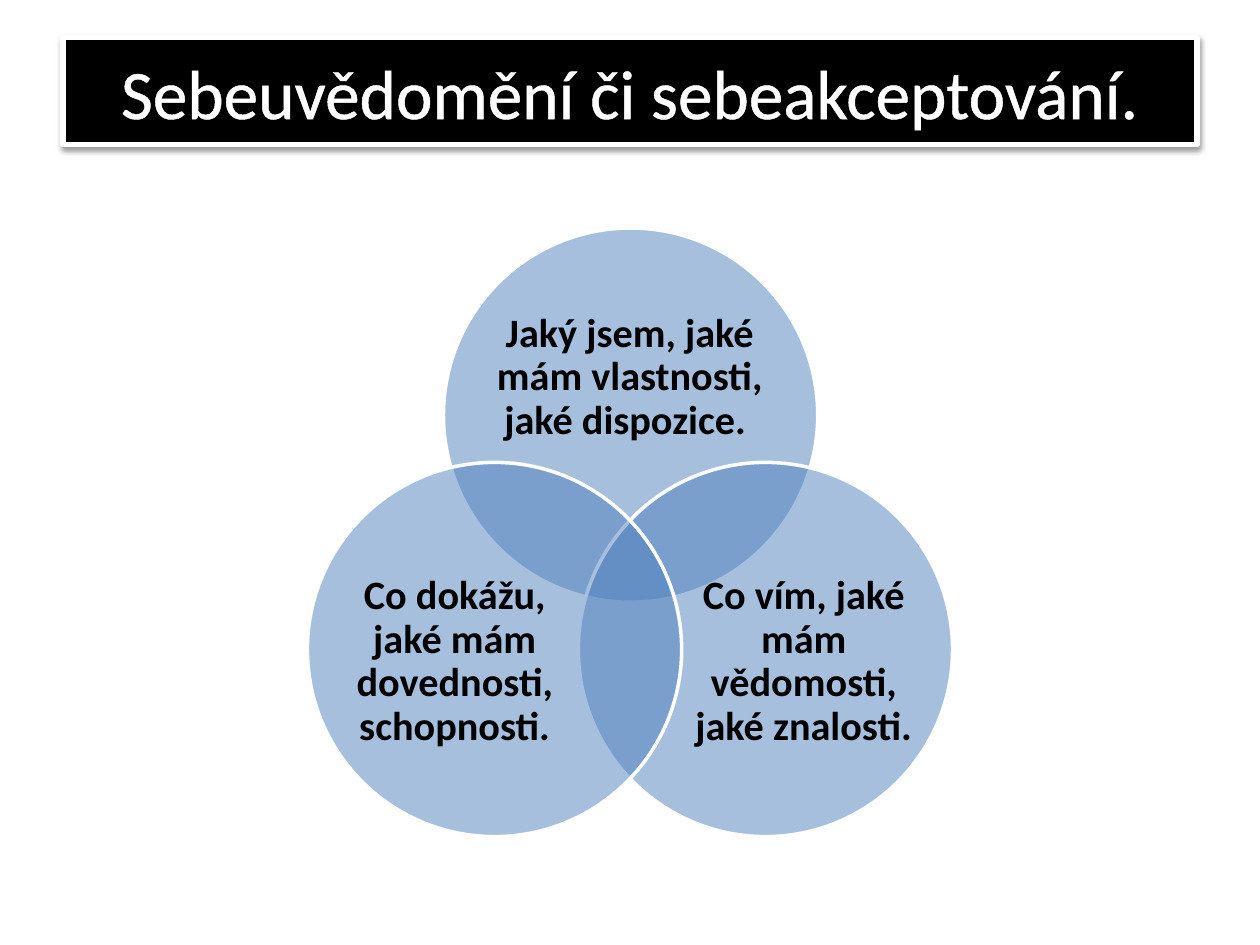
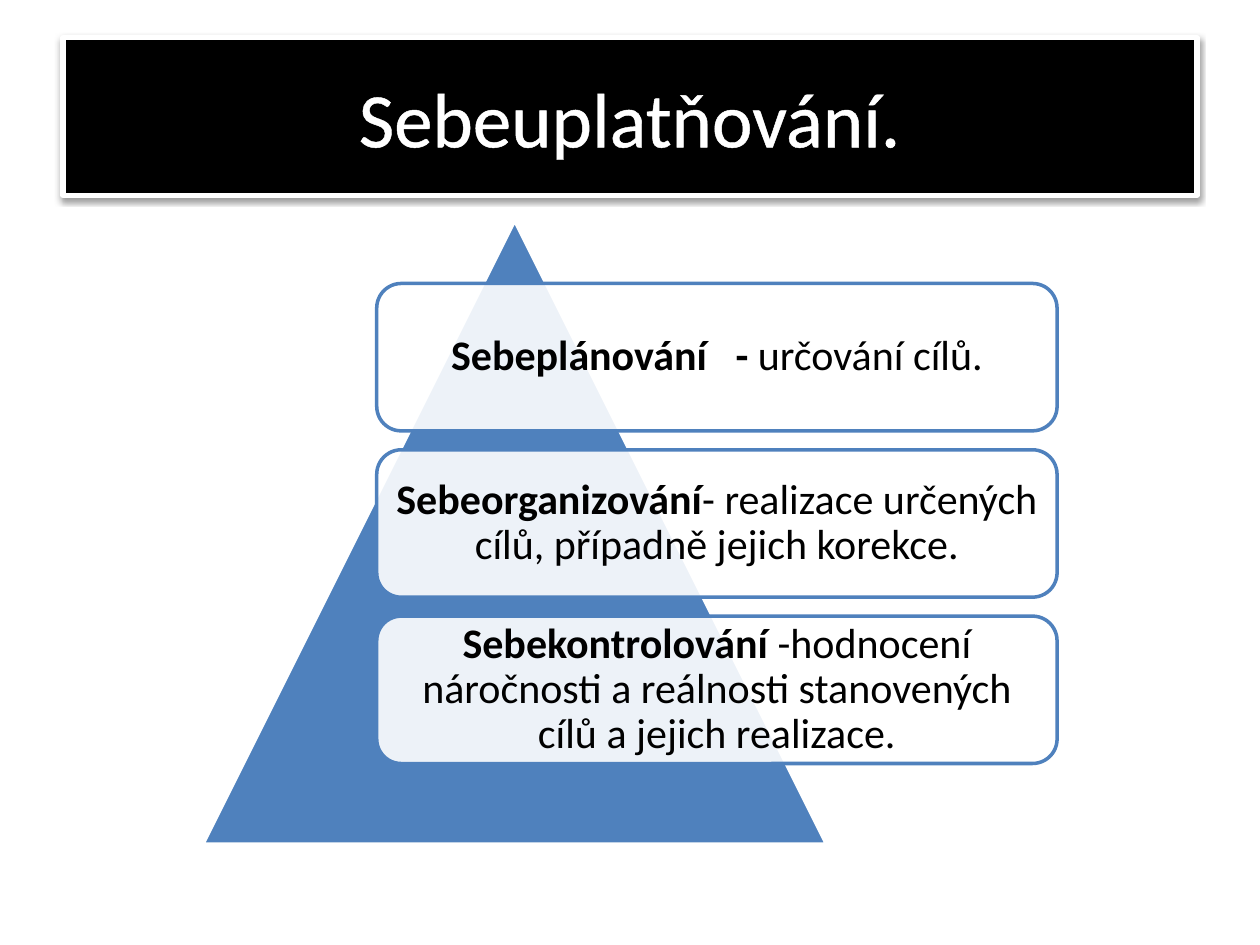
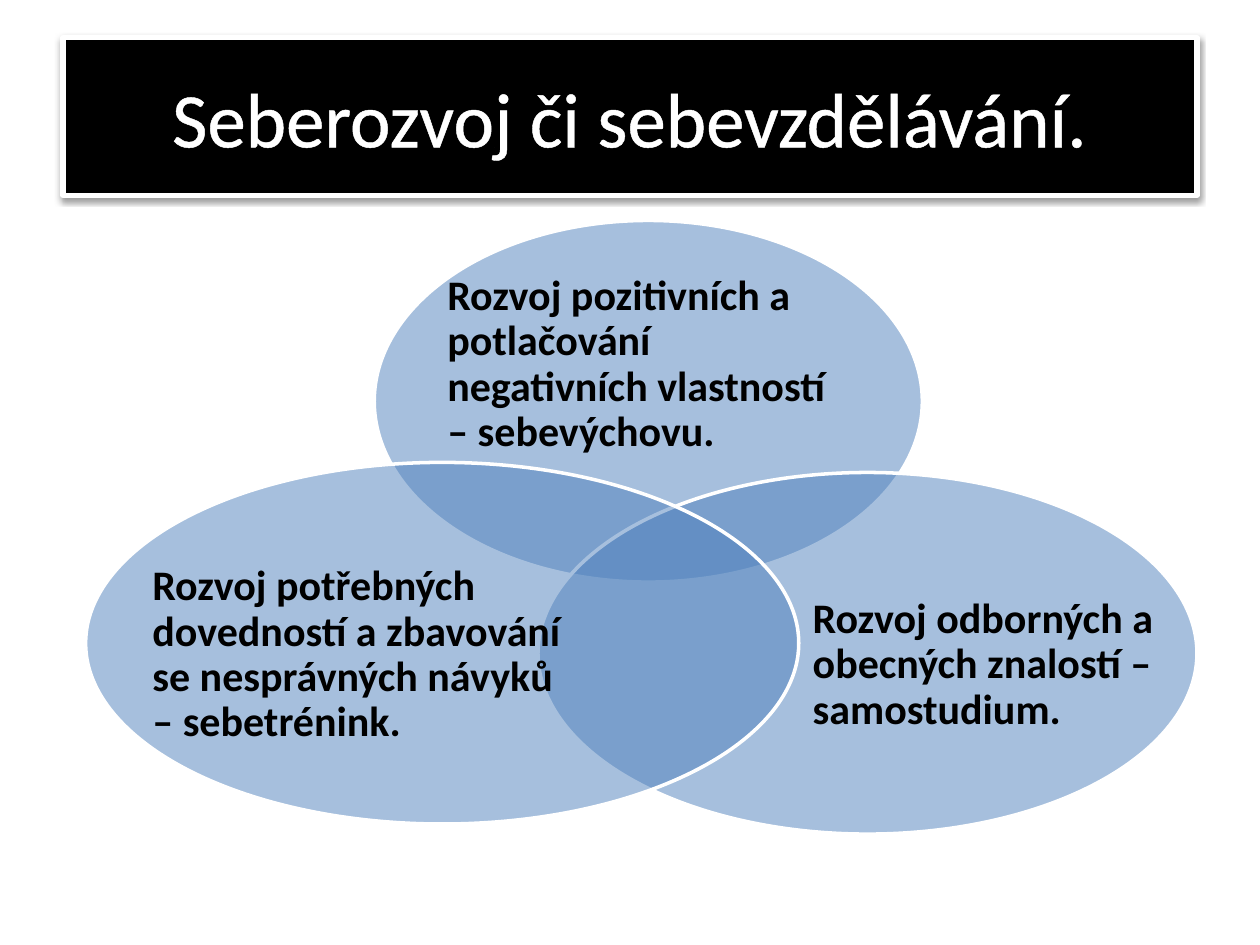
from lxml.etree import SubElement
from pptx import Presentation
from pptx.dml.color import RGBColor
from pptx.enum.shapes import MSO_SHAPE
from pptx.enum.text import MSO_ANCHOR, MSO_AUTO_SIZE, PP_ALIGN
from pptx.oxml import parse_xml
from pptx.oxml.ns import nsdecls, qn
from pptx.util import Inches, Pt

BLACK = RGBColor(0x00, 0x00, 0x00)
WHITE = RGBColor(0xFF, 0xFF, 0xFF)
BLUE = RGBColor(0x4F, 0x81, 0xBD)
FONT = "Calibri"

# Each circle: its box, its text box (left, top, width, height), its text
AWARENESS = [
    ((3.52, 1.81, 2.97, 2.97), (3.91, 2.33, 2.18, 1.34),
     "Jaký jsem, jaké mám vlastnosti, jaké dispozice. "),
    ((4.59, 3.67, 2.97, 2.97), (5.49, 4.44, 1.78, 1.63),
     "Co vím, jaké mám vědomosti, jaké znalosti."),
    ((2.44, 3.67, 2.97, 2.97), (2.72, 4.44, 1.78, 1.63),
     "Co dokážu, jaké mám dovednosti, schopnosti."),
]
DEVELOPMENT = [
    ((2.97, 1.75, 4.35, 2.87), (3.55, 2.25, 3.19, 1.29),
     "Rozvoj pozitivních a potlačování negativních vlastností – sebevýchovu."),
    ((4.27, 3.75, 5.23, 2.87), (6.45, 4.49, 2.75, 1.58),
     "Rozvoj odborných a obecných znalostí – samostudium."),
    ((0.68, 3.67, 5.66, 2.87), (1.21, 4.41, 3.4, 1.58),
     "Rozvoj potřebných dovedností a zbavování se nesprávných návyků – sebetrénink."),
]
# Each step: runs of (text, bold, extra letter spacing in points)
STEPS = [
    [("Sebeplánování", True, 0), (" ", True, 10.8), ("-", True, 0),
     (" určování cílů.", False, 0)],
    [("Sebeorganizování", True, 0),
     ("- realizace určených cílů, případně jejich korekce.", False, 0)],
    [("Sebekontrolování", True, 0),
     (" -hodnocení náročnosti a reálnosti stanovených cílů a jejich realizace.", False, 0)],
]
STEP_LEFT, STEP_TOP, STEP_WIDTH, STEP_HEIGHT = 2.99, 2.25, 5.4, 1.17
STEP_PITCH = 1.32

TITLE_SHADOW = (
    f'<a:effectLst {nsdecls("a")}><a:outerShdw blurRad="40000" dist="20000" dir="5400000"'
    ' rotWithShape="0"><a:srgbClr val="000000"><a:alpha val="38000"/></a:srgbClr>'
    '</a:outerShdw></a:effectLst>')
TITLE_OUTLINE = (
    f'<a:ln {nsdecls("a")} w="18415"><a:solidFill><a:srgbClr val="FFFFFF"/>'
    '</a:solidFill></a:ln>')


def inches(box):
    return [Inches(length) for length in box]


def add_run(paragraph, text, size, color=BLACK, bold=False):
    run = paragraph.add_run()
    run.text = text
    run.font.name = FONT
    run.font.size = Pt(size)
    run.font.bold = bold
    run.font.color.rgb = color
    return run


def add_titled_slide(presentation, text, height, size):
    slide = presentation.slides.add_slide(presentation.slide_layouts[5])
    title = slide.shapes.title
    title.left, title.top, title.width, title.height = inches((0.5, 0.3, 9, height))
    title.fill.solid()
    title.fill.fore_color.rgb = BLACK
    title.line.color.rgb = WHITE
    title.line.width = Pt(3)
    title._element.spPr.append(parse_xml(TITLE_SHADOW))
    frame = title.text_frame
    frame.auto_size = MSO_AUTO_SIZE.NONE
    frame.vertical_anchor = MSO_ANCHOR.MIDDLE
    paragraph = frame.paragraphs[0]
    paragraph.alignment = PP_ALIGN.CENTER
    run = add_run(paragraph, text, size, WHITE)
    run.font._element.insert(0, parse_xml(TITLE_OUTLINE))
    return slide


def add_figure(slide, preset, box, fill, line, opacity=100):
    """Add a preset shape; opacity is a percentage of its fill."""
    shape = slide.shapes.add_shape(preset, *inches(box))
    shape.shadow.inherit = False
    shape.fill.solid()
    shape.fill.fore_color.rgb = fill
    if opacity < 100:
        color = shape._element.spPr.find(qn("a:solidFill"))[0]
        SubElement(color, qn("a:alpha"), val=str(opacity * 1000))
    shape.line.color.rgb = line
    shape.line.width = Pt(2)
    return shape


def prepare_text(shape, margin, alignment):
    """Set up the text frame and give back its first paragraph."""
    frame = shape.text_frame
    frame.word_wrap = True
    frame.vertical_anchor = MSO_ANCHOR.MIDDLE
    frame.margin_left = frame.margin_right = Inches(margin)
    frame.margin_top = frame.margin_bottom = Inches(margin)
    paragraph = frame.paragraphs[0]
    paragraph.alignment = alignment
    paragraph.line_spacing = 0.9
    return paragraph


def add_venn(slide, circles, size, alignment):
    """Draw all circles first, so that no circle covers a label."""
    for circle_box, _, _ in circles:
        add_figure(slide, MSO_SHAPE.OVAL, circle_box, BLUE, WHITE, opacity=50)
    for _, text_box, text in circles:
        label = slide.shapes.add_textbox(*inches(text_box))
        add_run(prepare_text(label, 0, alignment), text, size, bold=True)


def add_pyramid(slide):
    add_figure(slide, MSO_SHAPE.ISOSCELES_TRIANGLE, (1.61, 1.75, 4.95, 4.95), BLUE, WHITE)
    for index, runs in enumerate(STEPS):
        box = (STEP_LEFT, STEP_TOP + index * STEP_PITCH, STEP_WIDTH, STEP_HEIGHT)
        step = add_figure(slide, MSO_SHAPE.ROUNDED_RECTANGLE, box, WHITE, BLUE, opacity=90)
        paragraph = prepare_text(step, 0.04, PP_ALIGN.CENTER)
        for text, bold, spacing in runs:
            run = add_run(paragraph, text, 24, bold=bold)
            if spacing:
                run.font._element.set("spc", str(round(spacing * 100)))


def main():
    presentation = Presentation()
    presentation.slide_width, presentation.slide_height = Inches(10), Inches(7.5)

    slide = add_titled_slide(presentation, "Sebeuvědomění či sebeakceptování.", 0.85, 39.6)
    add_venn(slide, AWARENESS, 23, PP_ALIGN.CENTER)

    slide = add_titled_slide(presentation, "Sebeuplatňování.", 1.25, 44)
    add_pyramid(slide)

    slide = add_titled_slide(presentation, "Seberozvoj či sebevzdělávání.", 1.25, 44)
    add_venn(slide, DEVELOPMENT, 24, PP_ALIGN.LEFT)

    presentation.save("out.pptx")


if __name__ == "__main__":
    main()
